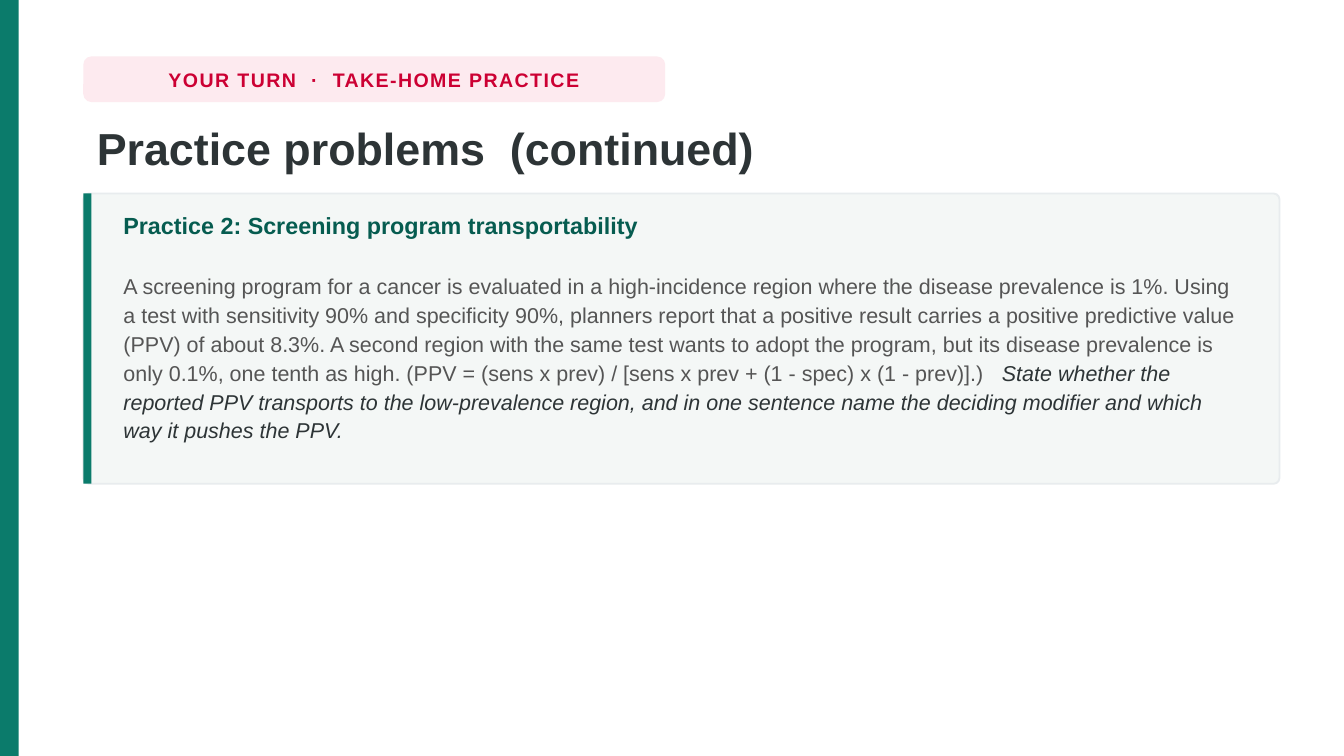
from dataclasses import dataclass

from pptx import Presentation
from pptx.dml.color import RGBColor
from pptx.enum.shapes import MSO_SHAPE
from pptx.enum.text import MSO_ANCHOR, MSO_AUTO_SIZE, PP_ALIGN
from pptx.util import Inches, Pt

RECT, ROUND = MSO_SHAPE.RECTANGLE, MSO_SHAPE.ROUNDED_RECTANGLE
TOP, MIDDLE = MSO_ANCHOR.TOP, MSO_ANCHOR.MIDDLE
LEFT, CENTER = PP_ALIGN.LEFT, PP_ALIGN.CENTER

# Grid of square cells: 100 columns by 56.25 rows
CELL = Inches(0.1)
COLS, ROWS = 100, 56.25
MARGIN, CONTENT = 6.2, 89


@dataclass(frozen=True)
class Theme:
    font: str = "Arial"
    green: str = "0B7B6B"
    dark_green: str = "065C50"
    red: str = "CC0033"
    pink: str = "FDEAEF"
    ink: str = "2D3436"
    gray: str = "555555"
    card: str = "F4F7F6"
    border: str = "E8ECEE"
    tag_size: float = 10.5
    title_size: float = 24
    heading_size: float = 12.5
    body_size: float = 11.5


@dataclass(frozen=True)
class Box:
    col: float
    row: float
    cols: float
    rows: float

    def emu(self) -> list[int]:
        return [round(n * CELL) for n in (self.col, self.row, self.cols, self.rows)]


@dataclass(frozen=True)
class Panel:
    box: Box
    fill: str
    radius: float = 0
    line: str = ""


T = Theme()
CARD = Box(MARGIN, 14.4, CONTENT, 21.6)
TAG = Panel(Box(MARGIN, 4.2, 43.3, 3.4), T.pink, radius=0.18)
PANELS = [
    Panel(Box(0, 0, 1.4, ROWS), T.green),
    Panel(CARD, T.card, radius=0.02, line=T.border),
    Panel(Box(CARD.col, CARD.row, 0.6, CARD.rows), T.green),
]


def add_panel(s, panel: Panel):
    sp = s.shapes.add_shape(ROUND if panel.radius else RECT, *panel.box.emu())
    if panel.radius:
        sp.adjustments[0] = panel.radius
    sp.shadow.inherit = False
    sp.fill.solid()
    sp.fill.fore_color.rgb = RGBColor.from_string(panel.fill)
    if panel.line:
        sp.line.color.rgb = RGBColor.from_string(panel.line)
        sp.line.width = Pt(1)
    else:
        sp.line.fill.background()
    return sp


def set_frame(tf, anchor=TOP, wrap: bool = True, top: float = 0.5,
              bottom: float = 0.5) -> None:
    """Set anchor, wrapping and the vertical insets, given in grid rows."""
    tf.auto_size = MSO_AUTO_SIZE.NONE
    tf.word_wrap = wrap
    tf.vertical_anchor = anchor
    tf.margin_top, tf.margin_bottom = round(top * CELL), round(bottom * CELL)


def set_paragraph(p, align=LEFT, line: float = 1.0, before: float = 0) -> None:
    p.alignment = align
    p.line_spacing = line
    p.space_before = Pt(before)


def add_run(p, text: str, size: float, color: str, bold: bool = False,
            italic: bool = False, spacing: float = 0) -> None:
    """Append formatted text; spacing is the letter spacing in points."""
    r = p.add_run()
    r.text = text
    r.font.name = T.font
    r.font.size = Pt(size)
    r.font.bold = bold
    r.font.italic = italic
    r.font.color.rgb = RGBColor.from_string(color)
    if spacing:
        r.font._element.set("spc", str(round(spacing * 100)))


def add_tag(s) -> None:
    tf = add_panel(s, TAG).text_frame
    set_frame(tf, MIDDLE, wrap=False)
    p = tf.paragraphs[0]
    set_paragraph(p, CENTER)
    add_run(p, "YOUR TURN  ·  TAKE-HOME PRACTICE", T.tag_size, T.red,
            bold=True, spacing=0.8)


def set_title(s) -> None:
    title = s.shapes.title
    title.left, title.top, title.width, title.height = Box(MARGIN, 8.4, CONTENT, 5.6).emu()
    set_frame(title.text_frame, MIDDLE, bottom=0.95)
    p = title.text_frame.paragraphs[0]
    set_paragraph(p, line=1.02)
    add_run(p, "Practice problems  (continued)", T.title_size, T.ink, bold=True)


def add_problem(s) -> None:
    box = Box(CARD.col + 2, CARD.row + 0.8, 84.8, CARD.rows - 1.6)
    tf = s.shapes.add_textbox(*box.emu()).text_frame
    set_frame(tf, top=0.28)
    p = tf.paragraphs[0]
    set_paragraph(p, line=1.12)
    add_run(p, "Practice 2: Screening program transportability",
            T.heading_size, T.dark_green, bold=True)
    p = tf.add_paragraph()
    set_paragraph(p, line=1.12, before=16.5)
    add_run(p, "A screening program for a cancer is evaluated in a high-incidence region "
               "where the disease prevalence is 1%. Using a test with sensitivity 90% and "
               "specificity 90%, planners report that a positive result carries a positive "
               "predictive value (PPV) of about 8.3%. A second region with the same test "
               "wants to adopt the program, but its disease prevalence is only 0.1%, one "
               "tenth as high. (PPV = (sens x prev) / [sens x prev + (1 - spec) x "
               "(1 - prev)].)", T.body_size, T.gray)
    add_run(p, " ", T.body_size, T.gray, spacing=6.4)
    add_run(p, "State whether the reported PPV transports to the low-prevalence region, "
               "and in one sentence name the deciding modifier and which way it pushes "
               "the PPV.", T.body_size, T.ink, italic=True)


def main() -> None:
    prs = Presentation()
    prs.slide_width, prs.slide_height = round(COLS * CELL), round(ROWS * CELL)
    s = prs.slides.add_slide(prs.slide_layouts[5])
    set_title(s)
    for panel in PANELS:
        add_panel(s, panel)
    add_tag(s)
    add_problem(s)
    prs.save("out.pptx")


if __name__ == "__main__":
    main()
